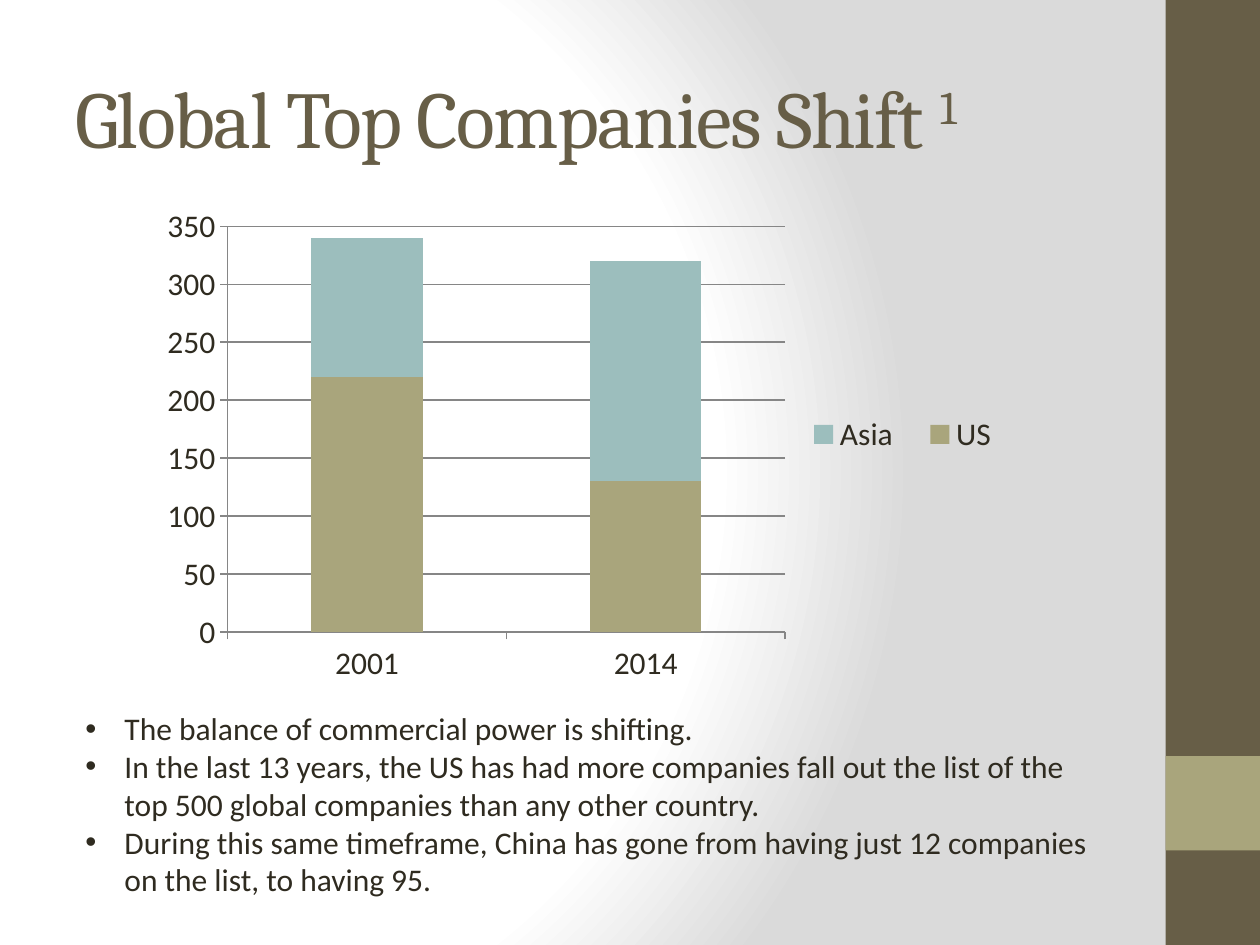
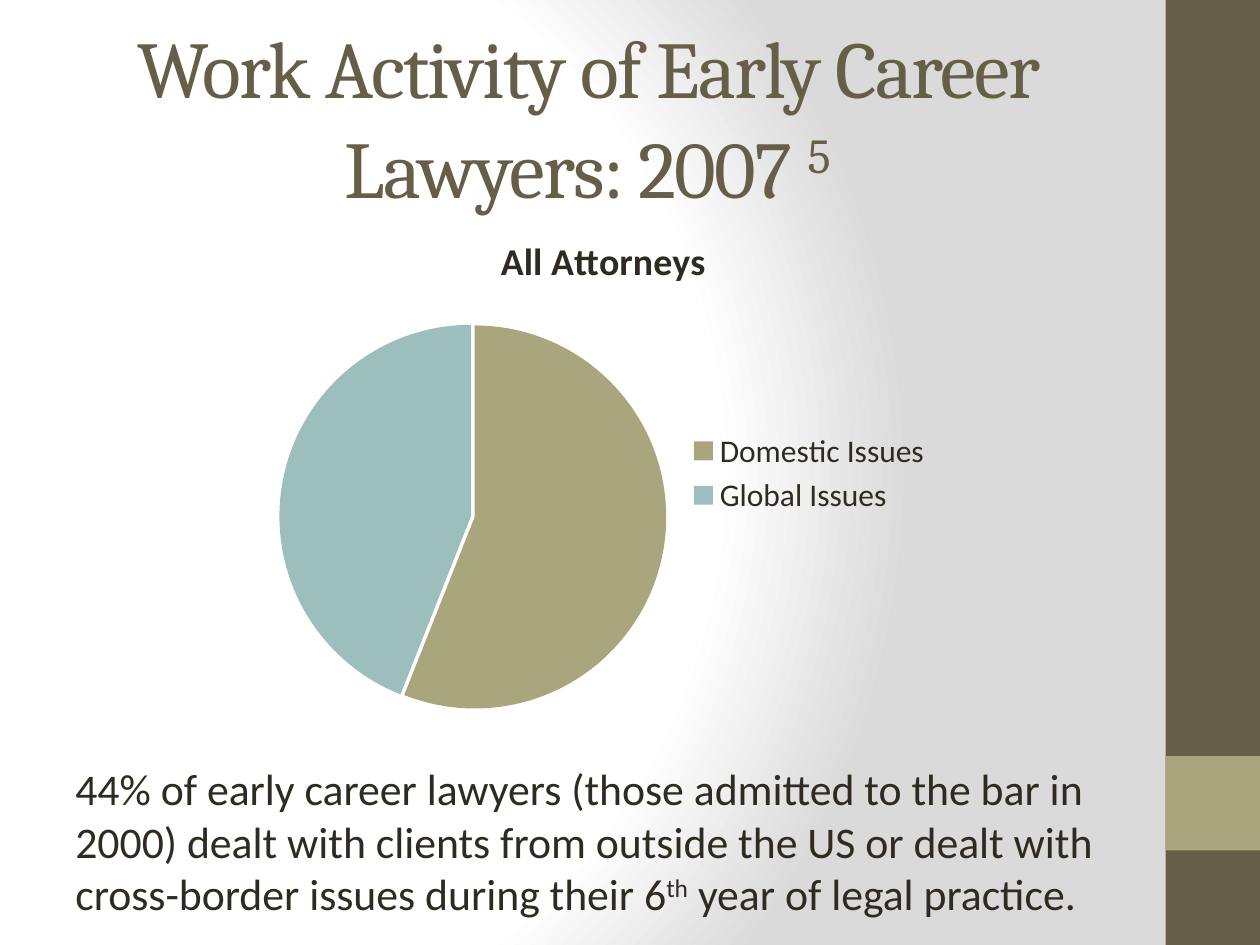
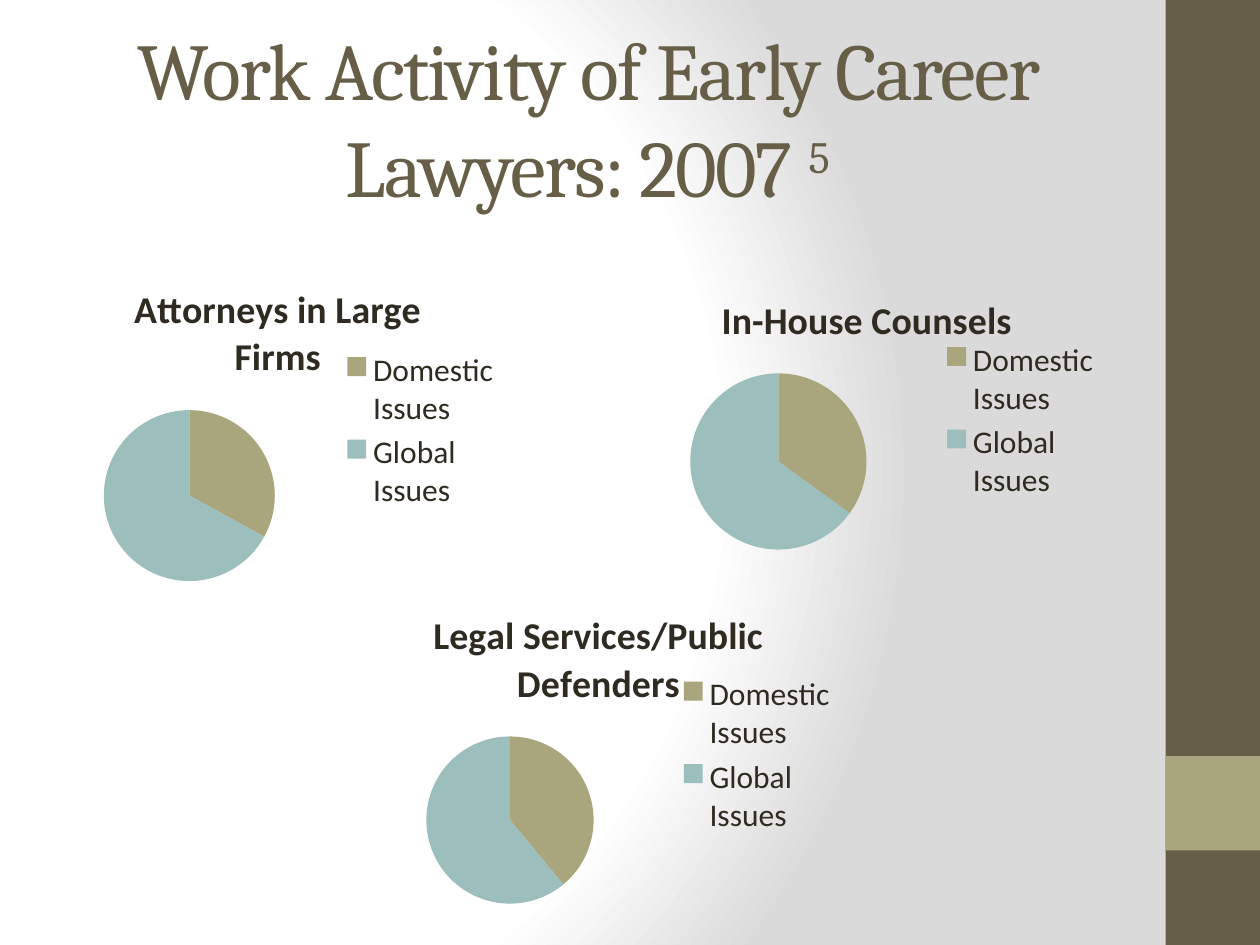
from dataclasses import dataclass

from lxml.etree import SubElement
from pptx import Presentation
from pptx.chart.data import CategoryChartData
from pptx.dml.color import RGBColor
from pptx.enum.chart import XL_CHART_TYPE, XL_LEGEND_POSITION, XL_TICK_MARK
from pptx.enum.shapes import MSO_SHAPE
from pptx.enum.text import MSO_ANCHOR, PP_ALIGN
from pptx.oxml import parse_xml
from pptx.oxml.ns import nsdecls, qn
from pptx.util import Inches, Pt


@dataclass(frozen=True)
class Theme:
    brown: str = "675E47"
    olive: str = "A9A57C"
    teal: str = "9CBEBD"
    ink: str = "2F2B20"
    axis: str = "868686"
    glow: str = "FFFFFF"
    shade: str = "DADADA"
    heading_font: str = "Cambria"
    body_font: str = "Calibri"
    title_size: float = 46
    statement_size: float = 25
    chart_title_size: float = 21.6
    body_size: float = 18


THEME = Theme()
TITLE_BOX = (0.5, 0.3, 8.33, 1.25)
ACTIVITY_TITLE = "Work Activity of Early Career Lawyers: 2007 "
ISSUES = ("Domestic Issues", "Global Issues")
SHIFT_POINTS = (
    "The balance of commercial power is shifting.",
    "In the last 13 years, the US has had more companies fall out the list of the "
    "top 500 global companies than any other country.",
    "During this same timeframe, China has gone from having just 12 companies on "
    "the list, to having 95.",
)
PRACTICE_PIES = (
    ("Attorneys in Large Firms", (33, 67), (0.33, 2.08, 3.75, 2.67)),
    ("In-House Counsels", (35, 65), (4.92, 2.17, 3.92, 2.33)),
    ("Legal Services/Public Defenders", (39, 61), (2.75, 4.67, 4, 2.64)),
)


def rgb(color):
    return RGBColor.from_string(color)


def inches(box):
    return [Inches(length) for length in box]


def paint(fill, color):
    fill.solid()
    fill.fore_color.rgb = rgb(color)


def style_font(font, name, size, color):
    font.name, font.size = name, Pt(size)
    font.color.rgb = rgb(color)


def set_master_background(master):
    """Give every slide the white glow that darkens towards the right."""
    master.background.fill.solid()
    properties = master.element.find(".//" + qn("p:bgPr"))
    stops = ((0, THEME.glow), (75, THEME.glow), (100, THEME.shade))
    stop_xml = "".join(
        f'<a:gs pos="{percent * 1000}"><a:srgbClr val="{color}"/></a:gs>'
        for percent, color in stops
    )
    properties.replace(properties[0], parse_xml(
        f'<a:gradFill {nsdecls("a")} rotWithShape="1"><a:gsLst>{stop_xml}</a:gsLst>'
        '<a:path path="circle"><a:fillToRect l="20000" t="50000" r="100000" b="50000"/>'
        "</a:path></a:gradFill>"
    ))


def add_band(slide, box, color):
    band = slide.shapes.add_shape(MSO_SHAPE.RECTANGLE, *inches(box))
    band.shadow.inherit = False
    paint(band.fill, color)
    band.line.fill.background()


def add_run(paragraph, text, font, size, color, raised=False, spacing=None):
    run = paragraph.add_run()
    run.text = text
    style_font(run.font, font, size, color)
    properties = run.font._element
    if raised:
        properties.set("baseline", "30000")
    if spacing is not None:
        properties.set("spc", str(spacing * 100))


def add_text_frame(slide, box):
    frame = slide.shapes.add_textbox(*inches(box)).text_frame
    frame.word_wrap = True
    return frame


def add_title(slide, text, note, note_size=THEME.title_size, align=PP_ALIGN.LEFT):
    frame = add_text_frame(slide, TITLE_BOX)
    frame.vertical_anchor = MSO_ANCHOR.MIDDLE
    heading = frame.paragraphs[0]
    heading.alignment = align
    for words, size, raised in ((text, THEME.title_size, False), (note, note_size, True)):
        add_run(heading, words, THEME.heading_font, size, THEME.brown, raised, -1)


def add_bullets(slide, points, box):
    frame = add_text_frame(slide, box)
    for index, point in enumerate(points):
        paragraph = frame.add_paragraph() if index else frame.paragraphs[0]
        properties = paragraph._p.get_or_add_pPr()
        properties.set("marL", str(Inches(0.31)))
        properties.set("indent", str(-Inches(0.31)))
        SubElement(properties, qn("a:buFont"), typeface="Arial")
        SubElement(properties, qn("a:buChar"), char="•")
        add_run(paragraph, point, THEME.body_font, THEME.body_size, THEME.ink)


def add_statement(slide, parts, box):
    """Add one large paragraph from (text, raised) parts."""
    paragraph = add_text_frame(slide, box).paragraphs[0]
    paragraph.space_before = Pt(THEME.statement_size * 0.2)
    for text, raised in parts:
        add_run(paragraph, text, THEME.body_font, THEME.statement_size, THEME.ink, raised)


def add_chart(slide, kind, categories, series, box):
    data = CategoryChartData()
    data.categories = categories
    for name, values in series:
        data.add_series(name, values)
    chart = slide.shapes.add_chart(kind, *inches(box), data).chart
    style_font(chart.font, THEME.body_font, THEME.body_size, THEME.ink)
    chart.has_title = False
    chart.has_legend = True
    chart.legend.position = XL_LEGEND_POSITION.RIGHT
    chart.legend.include_in_layout = False
    return chart


def set_layout(chart, tag, index, fractions, target=""):
    """Fix a chart part at left, top, width, height in fractions of the chart."""
    part = chart.element.find(".//" + qn(tag))
    for automatic in part.findall(qn("c:layout")):
        part.remove(automatic)
    sizes = "".join(
        f'<c:{key} val="{value}"/>' for key, value in zip("xywh", fractions)
    )
    part.insert(index, parse_xml(
        f'<c:layout {nsdecls("c")}><c:manualLayout>{target}<c:xMode val="edge"/>'
        f'<c:yMode val="edge"/>{sizes}</c:manualLayout></c:layout>'
    ))


def add_company_columns(slide, box):
    chart = add_chart(
        slide, XL_CHART_TYPE.COLUMN_STACKED, ("2001", "2014"),
        (("US", (220, 130)), ("Asia", (120, 190))), box,
    )
    plot = chart.plots[0]
    plot.gap_width, plot.overlap = 150, 100
    plot.vary_by_categories = False
    for region, color in zip(plot.series, (THEME.olive, THEME.teal)):
        paint(region.format.fill, color)
    companies = chart.value_axis
    companies.minimum_scale, companies.maximum_scale, companies.major_unit = 0, 350, 50
    companies.has_major_gridlines = True
    for axis in (chart.category_axis, companies):
        axis.major_tick_mark = XL_TICK_MARK.OUTSIDE
    for part in (chart.category_axis, companies, companies.major_gridlines):
        part.format.line.color.rgb = rgb(THEME.axis)
        part.format.line.width = Pt(0.75)
    set_layout(chart, "c:plotArea", 0, (0.157, 0.113, 0.531, 0.667),
               '<c:layoutTarget val="inner"/>')
    set_layout(chart, "c:legend", 1, (0.69, 0.41, 0.22, 0.09))


def add_issue_pie(slide, group, shares, box, explosion=0):
    chart = add_chart(slide, XL_CHART_TYPE.PIE, ISSUES, ((group, shares),), box)
    chart.has_title = True
    heading = chart.chart_title.text_frame.paragraphs[0]
    add_run(heading, group, THEME.body_font, THEME.chart_title_size, THEME.ink)
    heading.runs[0].font.bold = True
    chart.chart_title.include_in_layout = False
    plot = chart.plots[0]
    plot.vary_by_categories = True
    shares_series = plot.series[0]
    for index, color in enumerate((THEME.olive, THEME.teal)):
        paint(shares_series.points[index].format.fill, color)
    if explosion:
        first_point = shares_series._element.find(qn("c:dPt"))
        first_point.addprevious(
            parse_xml(f'<c:explosion {nsdecls("c")} val="{explosion}"/>')
        )


def add_slide(deck):
    slide = deck.slides.add_slide(deck.slide_layouts[6])
    add_band(slide, (9.25, 0, 0.75, 7.5), THEME.brown)
    add_band(slide, (9.25, 6, 0.75, 0.75), THEME.olive)
    return slide


def main():
    deck = Presentation()
    deck.slide_width, deck.slide_height = Inches(10), Inches(7.5)
    set_master_background(deck.slide_master)

    shift = add_slide(deck)
    add_title(shift, "Global Top Companies Shift ", "1")
    add_company_columns(shift, (0.5, 1.25, 8.33, 4.83))
    add_bullets(shift, SHIFT_POINTS, (0.58, 5.58, 8.17, 1.62))

    activity = add_slide(deck)
    add_title(activity, ACTIVITY_TITLE, "5", 48, PP_ALIGN.CENTER)
    add_issue_pie(activity, "All Attorneys", (56, 44), (2.08, 1.67, 5.42, 4.17), 1)
    add_statement(activity, (
        ("44% of early career lawyers (those admitted to the bar in 2000) dealt with "
         "clients from outside the US or dealt with cross-border issues during their 6",
         False),
        ("th", True),
        (" year of legal practice.", False),
    ), (0.5, 6, 8.33, 1.25))

    practices = add_slide(deck)
    add_title(practices, ACTIVITY_TITLE, "5", 44, PP_ALIGN.CENTER)
    for group, shares, box in PRACTICE_PIES:
        add_issue_pie(practices, group, shares, box)

    deck.save("out.pptx")


if __name__ == "__main__":
    main()
